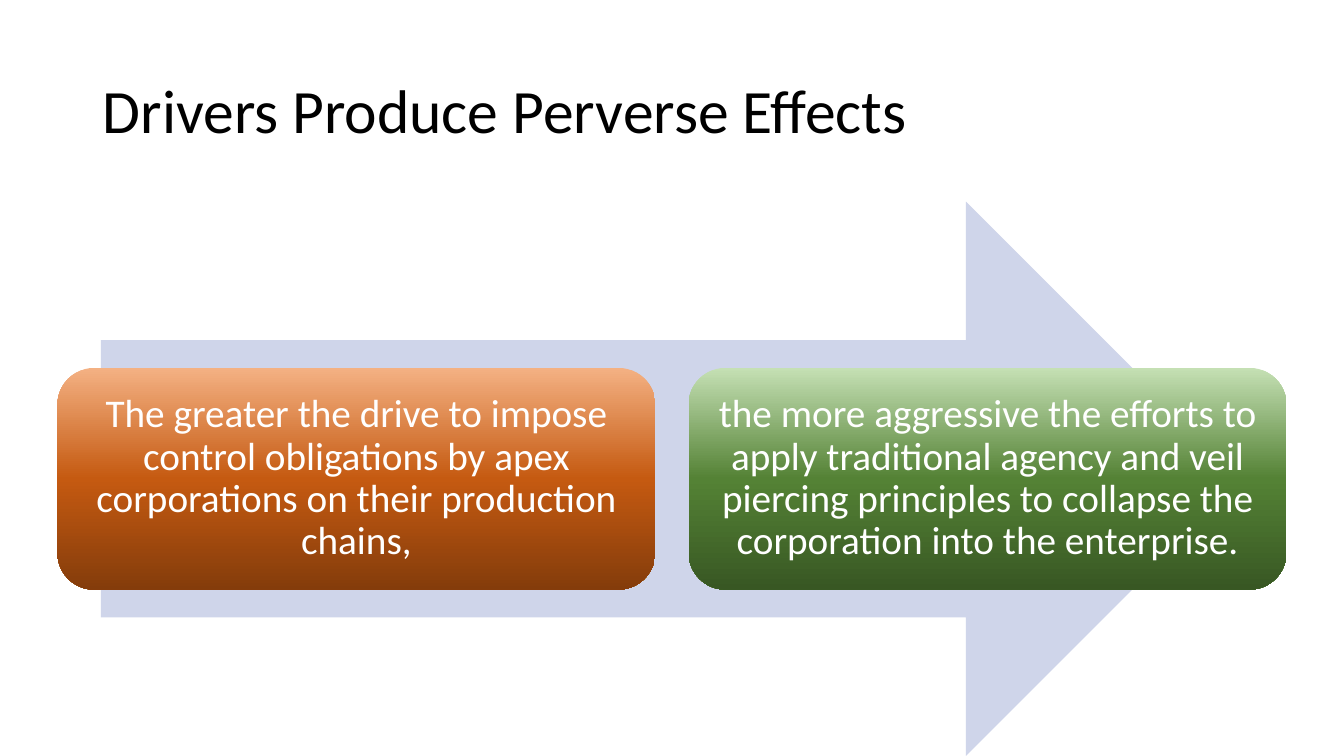
import copy

import pptx
import pptx.dml.color
import pptx.enum.shapes
import pptx.enum.text
import pptx.oxml.ns
import pptx.util

Inches = pptx.util.Inches
SHAPES = pptx.enum.shapes.MSO_SHAPE
ALIGN = pptx.enum.text.PP_ALIGN
MIDDLE = pptx.enum.text.MSO_ANCHOR.MIDDLE

COLORS = {
    "title": "000000",
    "arrow": "CFD5EA",
    "card text": "FFFFFF",
    "drive": ["F4B183", "C55A11", "843C0B"],
    "effect": ["C5E0B4", "548235", "385723"],
}
CARDS = [
    ("drive", "The greater the drive to impose control obligations by apex "
              "corporations on their production chains,"),
    ("effect", "the more aggressive the efforts to apply traditional agency and veil "
               "piercing principles to collapse the corporation into the enterprise."),
]
CARD_LEFT, CARD_TOP, CARD_WIDTH, CARD_HEIGHT, CARD_STEP = 0.57, 3.65, 5.93, 2.2, 6.26


def rgb(color):
    return pptx.dml.color.RGBColor.from_string(color)


def format_text(shape, text, size, color, align):
    frame = shape.text_frame
    frame.text = text
    frame.word_wrap = True
    frame.auto_size = pptx.enum.text.MSO_AUTO_SIZE.NONE
    frame.vertical_anchor = MIDDLE
    para = frame.paragraphs[0]
    para.alignment = align
    para.line_spacing = 0.9
    para.font.name = "Calibri"
    para.font.size = pptx.util.Pt(size)
    para.font.color.rgb = rgb(color)


deck = pptx.Presentation()
deck.slide_width, deck.slide_height = Inches(13.33), Inches(7.5)
page = deck.slides.add_slide(deck.slide_layouts.get_by_name("Title Only"))

# Title
title = page.shapes.title
title.left, title.top = Inches(0.92), Inches(0.4)
title.width, title.height = Inches(11.5), Inches(1.45)
format_text(title, "Drivers Produce Perverse Effects", 44, COLORS["title"], ALIGN.LEFT)

# Arrow behind the cards
arrow = page.shapes.add_shape(
    SHAPES.RIGHT_ARROW, Inches(1), Inches(2), Inches(11.33), Inches(5.5))
arrow.shadow.inherit = False
arrow.fill.solid()
arrow.fill.fore_color.rgb = rgb(COLORS["arrow"])
arrow.line.fill.background()

# Cause and effect cards
for column, (role, text) in enumerate(CARDS):
    card = page.shapes.add_shape(
        SHAPES.ROUNDED_RECTANGLE, Inches(CARD_LEFT + column * CARD_STEP),
        Inches(CARD_TOP), Inches(CARD_WIDTH), Inches(CARD_HEIGHT))
    card.shadow.inherit = False
    card.line.fill.background()

    # Three-stop gradient running downwards
    card.fill.gradient()
    card.fill.gradient_angle = 270
    stop_list = card._element.spPr.find(".//" + pptx.oxml.ns.qn("a:gsLst"))
    stop_list.append(copy.deepcopy(stop_list[-1]))
    for index, stop in enumerate(card.fill.gradient_stops):
        stop.position = index / 2
        stop.color.rgb = rgb(COLORS[role][index])

    format_text(card, text, 28, COLORS["card text"], ALIGN.CENTER)
    frame = card.text_frame
    frame.margin_left = frame.margin_right = Inches(0.12)
    frame.margin_top = frame.margin_bottom = Inches(0.12)

deck.save("out.pptx")
